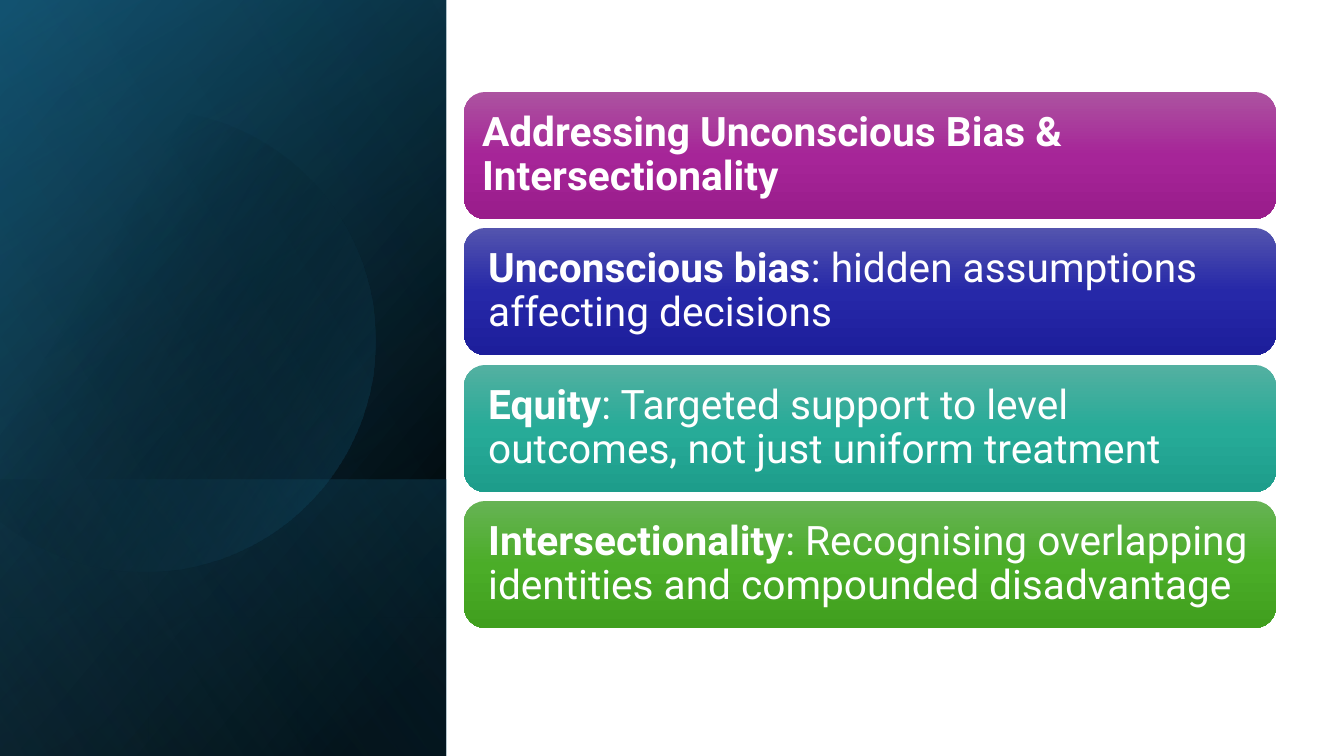
import math
import lxml.etree
import pptx
import pptx.dml.color
import pptx.enum.shapes
import pptx.enum.text
import pptx.oxml
import pptx.oxml.ns
import pptx.util

PX = 9071.4  # EMU in one px
HUES = {
    "black": "000000", "navy": "104862", "teal": "156082", "sky": "46B1E1",
    "white": "FFFFFF",
}
KIND = pptx.enum.shapes.MSO_SHAPE


def shade(shape, angle, stops):
    """Fill with a gradient of (position %, hex colour, opacity %) stops."""
    shape.shadow.inherit = False
    shape.line.fill.background()
    shape.fill.gradient()
    shape.fill.gradient_angle = 0
    grad = shape._element.spPr.find(pptx.oxml.ns.qn("a:gradFill"))
    grad.find(pptx.oxml.ns.qn("a:lin")).set("ang", str(angle * 60000))
    rows = grad.find(pptx.oxml.ns.qn("a:gsLst"))
    for old in list(rows):
        rows.remove(old)
    for place, hue, alpha in stops:
        stop = lxml.etree.SubElement(rows, pptx.oxml.ns.qn("a:gs"), pos=str(place * 1000))
        tint = lxml.etree.SubElement(stop, pptx.oxml.ns.qn("a:srgbClr"), val=hue)
        lxml.etree.SubElement(tint, pptx.oxml.ns.qn("a:alpha"), val=str(alpha * 1000))


def write(shape, lead, rest="", size=29, hue="white", font="Roboto", inset=18):
    """Set a bold lead followed by plain text."""
    frame = shape.text_frame
    frame.word_wrap = True
    frame.auto_size = pptx.enum.text.MSO_AUTO_SIZE.NONE
    frame.vertical_anchor = pptx.enum.text.MSO_ANCHOR.MIDDLE
    frame.margin_left = frame.margin_right = round(inset * PX)
    frame.margin_top = frame.margin_bottom = round(inset * PX)
    para = frame.paragraphs[0]
    para.alignment = pptx.enum.text.PP_ALIGN.LEFT
    para.line_spacing = 0.9
    for words, bold in ((lead, True), (rest, False)):
        if words:
            run = para.add_run()
            run.text = words
            run.font.name = font
            run.font.size = pptx.util.Pt(size)
            run.font.bold = bold
            run.font.color.rgb = pptx.dml.color.RGBColor.from_string(HUES[hue])


deck = pptx.Presentation()
deck.slide_width = pptx.util.Inches(13.333)
deck.slide_height = pptx.util.Inches(7.5)
slide = deck.slides.add_slide(deck.slide_layouts[5])
shapes = slide.shapes

# Side panel: turned, mirrored sheets with a disc below the last one
black, navy, teal, sky = (HUES[name] for name in ("black", "navy", "teal", "sky"))
full = (-155, 155, 756, 446)
sheets = [
    (full, 50, [(8, black, 100), (100, navy, 100)]),
    (full, 30, [(0, black, 0), (99, teal, 46)]),
    ((85, 395, 276, 446), 130, [(2, teal, 29), (100, black, 30)]),
    (full, 120, [(0, black, 0), (99, sky, 11)]),
]
for index, (box, angle, stops) in enumerate(sheets):
    if index == 3:
        mid_x, mid_y, radius = 144, 341, 231
        reach = math.acos(-mid_x / radius)  # where the disc meets the slide edge
        turns = [reach * (step / 60 - 1) for step in range(121)]
        dots = [(round((mid_x + radius * math.cos(turn)) * PX),
                 round((mid_y + radius * math.sin(turn)) * PX)) for turn in turns]
        pen = shapes.build_freeform(*dots[0])
        pen.add_line_segments(dots[1:], close=True)
        shade(pen.convert_to_shape(), 30, [(29, black, 0), (100, teal, 43)])
    sheet = shapes.add_shape(KIND.RECTANGLE, *(round(n * PX) for n in box))
    sheet.rotation = 90
    sheet._element.spPr.xfrm.set("flipH", "1")
    shade(sheet, angle, stops)

# Cards: the first one carries the title
cards = [
    ("Addressing Unconscious Bias & Intersectionality", "",
     ("AC53A0", "A62598", "991C8B")),
    ("Unconscious bias", ": hidden assumptions affecting decisions",
     ("5354AE", "2628A8", "1D1E9B")),
    ("Equity", ": Targeted support to level outcomes, not just uniform treatment",
     ("53B0A1", "27AB98", "1D9D8B")),
    ("Intersectionality", ": Recognising overlapping identities and compounded disadvantage",
     ("66B354", "4BAD28", "409F1E")),
]
for index, (lead, rest, tones) in enumerate(cards):
    box = [round(n * PX) for n in (464, 92 + 273 * index // 2, 812, 127)]
    card = shapes.add_shape(KIND.ROUNDED_RECTANGLE, *box)
    shade(card, 90, [(50 * step, tone, 100) for step, tone in enumerate(tones)])
    if index == 0:
        title = shapes.title
        title.left, title.top, title.width, title.height = box
        shapes._spTree.append(title._element)
        write(title, lead)
    else:
        write(card, lead, rest)

deck.save("out.pptx")
